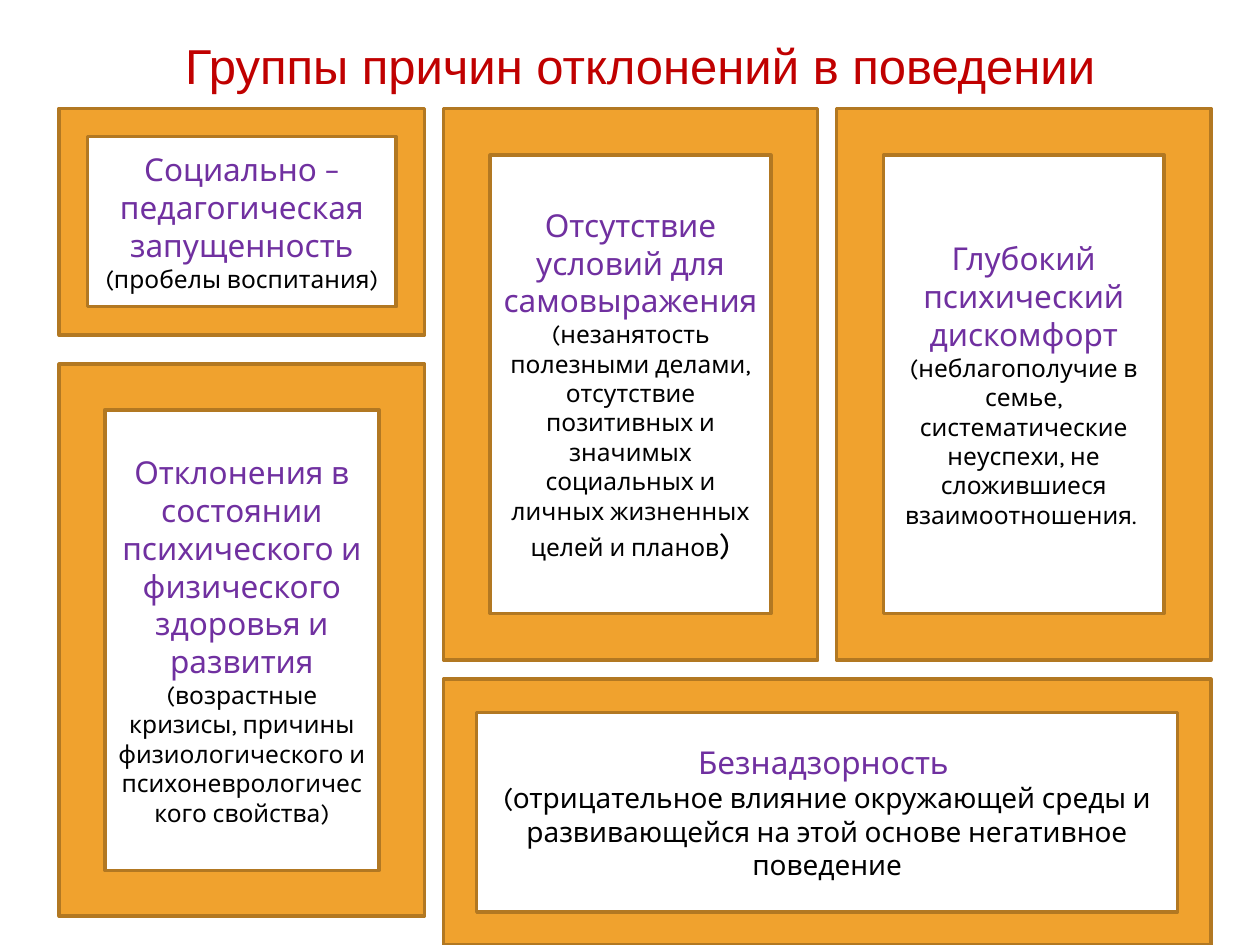
from pptx import Presentation, util as u
from pptx.dml.color import RGBColor
from pptx.enum import shapes, text

RED = RGBColor(0xC0, 0x00, 0x00)
PURPLE = RGBColor(0x70, 0x30, 0xA0)
BLACK = RGBColor(0, 0, 0)
ORANGE = RGBColor(0xF0, 0xA2, 0x2E)
BROWN = RGBColor(0xB2, 0x78, 0x22)

# Content
TITLE = "Группы причин отклонений в поведении"
HEAD = (18, PURPLE)
NOTE = (14, BLACK)
WIDE = (16, BLACK)
LAST = (18, BLACK)

# Each frame: first column, column span, top, height, paragraphs of (text, style)
FRAMES = [
    (0, 1, 0.86, 1.8, [[("Социально – педагогическая запущенность ", HEAD),
                        ("(пробелы воспитания)", NOTE)]]),
    (2, 1, 0.86, 4.38, [[("Глубокий психический дискомфорт ", HEAD),
                         ("(неблагополучие в семье, систематические неуспехи, "
                          "не сложившиеся взаимоотношения. ", NOTE)]]),
    (0, 1, 2.89, 4.38, [[("Отклонения в состоянии психического и физического "
                          "здоровья и развития ", HEAD),
                         ("(возрастные кризисы, причины физиологического и "
                          "психоневрологического свойства)", NOTE)]]),
    (1, 1, 0.86, 4.38, [[("Отсутствие условий для самовыражения", HEAD)],
                        [("(незанятость полезными делами, отсутствие позитивных "
                          "и значимых социальных и личных жизненных целей "
                          "и планов", NOTE), (")", LAST)]]),
    (1, 2, 5.39, 2.11, [[("Безнадзорность ", HEAD)],
                        [("(отрицательное влияние окружающей среды и "
                          "развивающейся на этой основе негативное поведение",
                          WIDE)]]),
]

# Column grid
LEFT, GAP = 0.47, 0.15
COLS = [2.9, 2.97, 2.97]


def span(col, n):
    left = LEFT + sum(COLS[:col]) + GAP * col
    return left, sum(COLS[col:col + n]) + GAP * (n - 1)


def style(run, size, color, name):
    run.font.size = u.Pt(size)
    run.font.color.rgb = color
    run.font.name = name


def add_frame(slide, col, n, top, high, paras):
    left, wide = span(col, n)
    box = slide.shapes.add_shape(
        shapes.MSO_SHAPE.FRAME,
        *(u.Inches(v) for v in (left, top, wide, high)))
    box.shadow.inherit = False
    box.fill.solid()
    box.fill.fore_color.rgb = ORANGE
    box.line.color.rgb = BROWN
    box.line.width = u.Pt(2)
    frame = box.text_frame
    frame.word_wrap = True
    frame.vertical_anchor = text.MSO_ANCHOR.MIDDLE
    for i, runs in enumerate(paras):
        para = frame.add_paragraph() if i else frame.paragraphs[0]
        para.alignment = text.PP_ALIGN.CENTER
        for words, (size, color) in runs:
            run = para.add_run()
            run.text = words
            style(run, size, color, "Karla")


def main():
    prs = Presentation()
    prs.slide_width, prs.slide_height = u.Inches(10), u.Inches(7.5)
    slide = prs.slides.add_slide(prs.slide_layouts[5])

    # Title
    title = slide.shapes.title
    title.left, title.top = u.Inches(0.86), u.Inches(0.23)
    title.width, title.height = u.Inches(8.44), u.Inches(0.57)
    frame = title.text_frame
    frame.text = TITLE
    frame.auto_size = text.MSO_AUTO_SIZE.NONE
    frame.vertical_anchor = text.MSO_ANCHOR.TOP
    para = frame.paragraphs[0]
    para.alignment = text.PP_ALIGN.CENTER
    style(para.runs[0], 28, RED, "Arial")

    # Frames
    for item in FRAMES:
        add_frame(slide, *item)

    prs.save("out.pptx")


if __name__ == "__main__":
    main()
